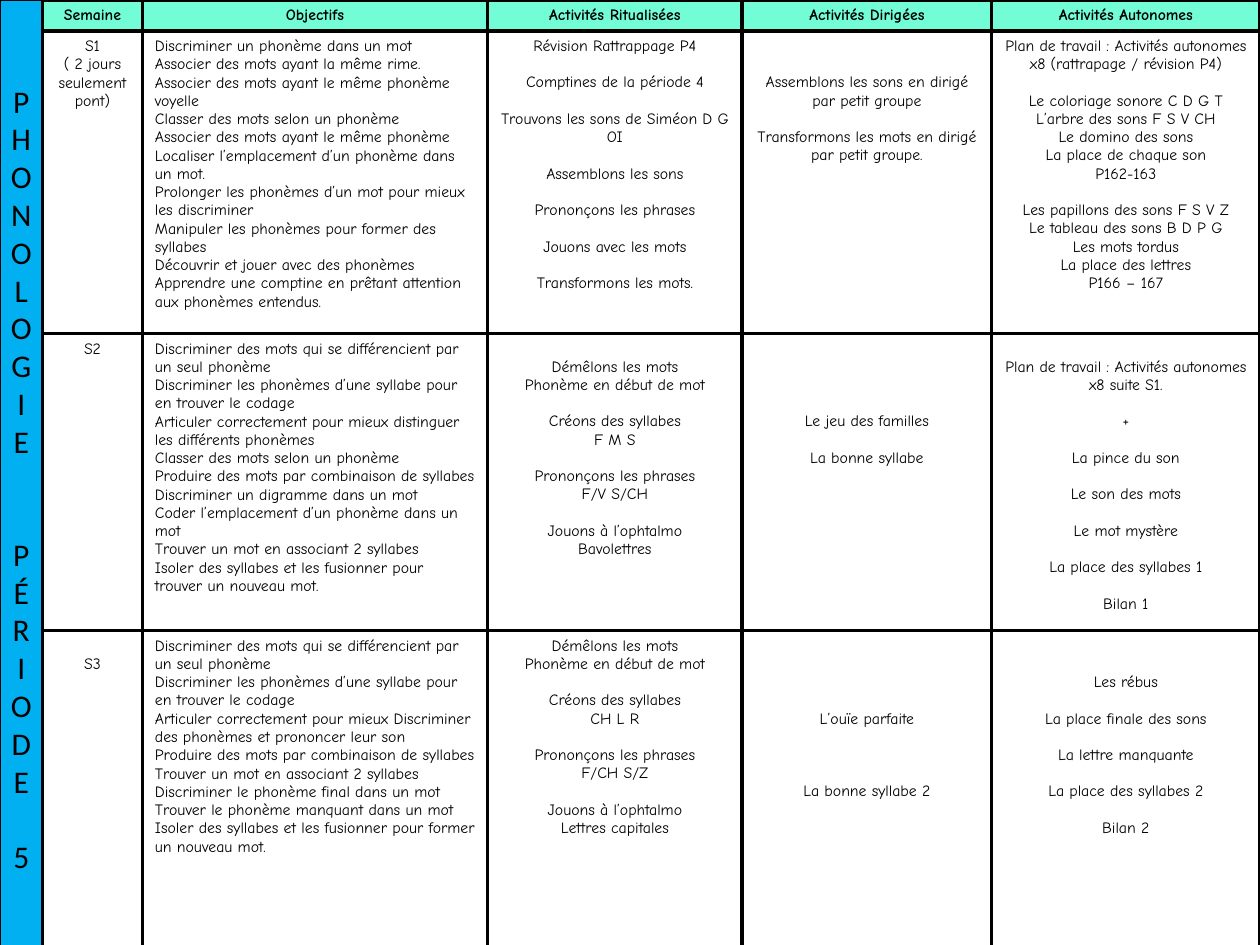
from lxml.etree import SubElement
from pptx import Presentation
from pptx.dml.color import RGBColor
from pptx.enum.shapes import MSO_SHAPE
from pptx.enum.text import MSO_ANCHOR, PP_ALIGN
from pptx.oxml.ns import qn
from pptx.util import Cm, Pt

COLORS = {"band": "00B0F0", "header": "73FDD6", "ink": "000000"}
COLS = [2.01, 6.96, 5.13, 5.03, 5.41]
ROWS = [0.61, 6.1, 5.99, 6.6]
HEADERS = ["Semaine", "Objectifs", "Activités Ritualisées",
           "Activités Dirigées", "Activités Autonomes"]

# One list per week; a blank line in a text becomes paragraph spacing
WEEKS = [
    ["S1\n( 2 jours seulement pont)",
     """Discriminer un phonème dans un mot
Associer des mots ayant la même rime.
Associer des mots ayant le même phonème voyelle
Classer des mots selon un phonème
Associer des mots ayant le même phonème
Localiser l’emplacement d’un phonème dans un mot.
Prolonger les phonèmes d’un mot pour mieux les discriminer
Manipuler les phonèmes pour former des syllabes
Découvrir et jouer avec des phonèmes
Apprendre une comptine en prêtant attention aux phonèmes entendus.""",
     """Révision Rattrappage P4

Comptines de la période 4

Trouvons les sons de Siméon D G OI

Assemblons les sons

Prononçons les phrases

Jouons avec les mots

Transformons les mots.""",
     """

Assemblons les sons en dirigé par petit groupe

Transformons les mots en dirigé par petit groupe.""",
     """Plan de travail : Activités autonomes x8 (rattrapage / révision P4)

Le coloriage sonore C D G T
L’arbre des sons F S V CH
Le domino des sons
La place de chaque son
P162-163

Les papillons des sons F S V Z
Le tableau des sons B D P G
Les mots tordus
La place des lettres
P166 – 167"""],
    ["S2",
     """Discriminer des mots qui se différencient par un seul phonème
Discriminer les phonèmes d’une syllabe pour en trouver le codage
Articuler correctement pour mieux distinguer les différents phonèmes
Classer des mots selon un phonème
Produire des mots par combinaison de syllabes
Discriminer un digramme dans un mot
Coder l’emplacement d’un phonème dans un mot
Trouver un mot en associant 2 syllabes
Isoler des syllabes et les fusionner pour trouver un nouveau mot.""",
     """
Démêlons les mots
Phonème en début de mot

Créons des syllabes
F M S

Prononçons les phrases
F/V S/CH

Jouons à l’ophtalmo
Bavolettres""",
     """



Le jeu des familles

La bonne syllabe""",
     """
Plan de travail : Activités autonomes x8 suite S1.

+

La pince du son

Le son des mots

Le mot mystère

La place des syllabes 1

Bilan 1"""],
    ["\nS3",
     """Discriminer des mots qui se différencient par un seul phonème
Discriminer les phonèmes d’une syllabe pour en trouver le codage
Articuler correctement pour mieux Discriminer des phonèmes et prononcer leur son
Produire des mots par combinaison de syllabes
Trouver un mot en associant 2 syllabes
Discriminer le phonème final dans un mot
Trouver le phonème manquant dans un mot
Isoler des syllabes et les fusionner pour former un nouveau mot.""",
     """Démêlons les mots
Phonème en début de mot

Créons des syllabes
CH L R

Prononçons les phrases
F/CH S/Z

Jouons à l’ophtalmo
Lettres capitales""",
     """



L’ouïe parfaite



La bonne syllabe 2""",
     """

Les rébus

La place finale des sons

La lettre manquante

La place des syllabes 2

Bilan 2"""],
]


def write(box, tf, text, font, size, pitch, align=PP_ALIGN.CENTER, bold=False):
    """Fill a cell or shape; leading blanks go to the top margin of box."""
    body = text.lstrip("\n")
    box.margin_top = Pt(3.6 + pitch * (len(text) - len(body)))
    gap, first = 0, True
    for line in body.split("\n"):
        if not line:
            gap += pitch
            continue
        p = tf.paragraphs[0] if first else tf.add_paragraph()
        p.text, p.alignment = line, align
        if gap:
            p.space_before = Pt(gap)
        p.font.name, p.font.size, p.font.bold = font, Pt(size), bold
        p.font.color.rgb = RGBColor.from_string(COLORS["ink"])
        gap, first = 0, False


def add_borders(cell, width):
    tcPr = cell._tc.get_or_add_tcPr()
    for side in ("a:lnL", "a:lnR", "a:lnT", "a:lnB"):
        ln = SubElement(tcPr, qn(side), w=str(Pt(width)))
        fill = SubElement(ln, qn("a:solidFill"))
        SubElement(fill, qn("a:srgbClr"), val=COLORS["ink"])


prs = Presentation()
prs.slide_width, prs.slide_height = Cm(25.4), Cm(19.05)
s = prs.slides.add_slide(prs.slide_layouts[6])

# Vertical title band
band = s.shapes.add_shape(MSO_SHAPE.RECTANGLE, 0, 0, Cm(0.86), Cm(19.48))
band.shadow.inherit = False
band.fill.solid()
band.fill.fore_color.rgb = RGBColor.from_string(COLORS["band"])
band.line.color.rgb = RGBColor.from_string(COLORS["ink"])
band.line.width = Pt(0.75)
tf = band.text_frame
tf.word_wrap = True
tf.vertical_anchor = MSO_ANCHOR.TOP
tf.margin_left = tf.margin_right = 0
title = "\n\n" + "\n".join("PHONOLOGIE") + "\n\n\n" + "\n".join("PÉRIODE") + "\n\n5"
write(tf, tf, title, "Calibri", 18, 21.5)

# Weekly planning table
tbl = s.shapes.add_table(len(ROWS), len(COLS), Cm(0.86), 0,
                         Cm(sum(COLS)), Cm(sum(ROWS))).table
tbl.first_row = tbl.horz_banding = False
for col, width in zip(tbl.columns, COLS):
    col.width = Cm(width)
for row, height in zip(tbl.rows, ROWS):
    row.height = Cm(height)

for i, texts in enumerate([HEADERS] + WEEKS):
    for j, text in enumerate(texts):
        cell = tbl.cell(i, j)
        add_borders(cell, 2.25)
        if i == 0:
            cell.fill.solid()
            cell.fill.fore_color.rgb = RGBColor.from_string(COLORS["header"])
        else:
            cell.fill.background()
        align = PP_ALIGN.LEFT if i and j == 1 else PP_ALIGN.CENTER
        write(cell, cell.text_frame, text, "Comic Neue", 9, 10.4, align, i == 0)

prs.save("out.pptx")
